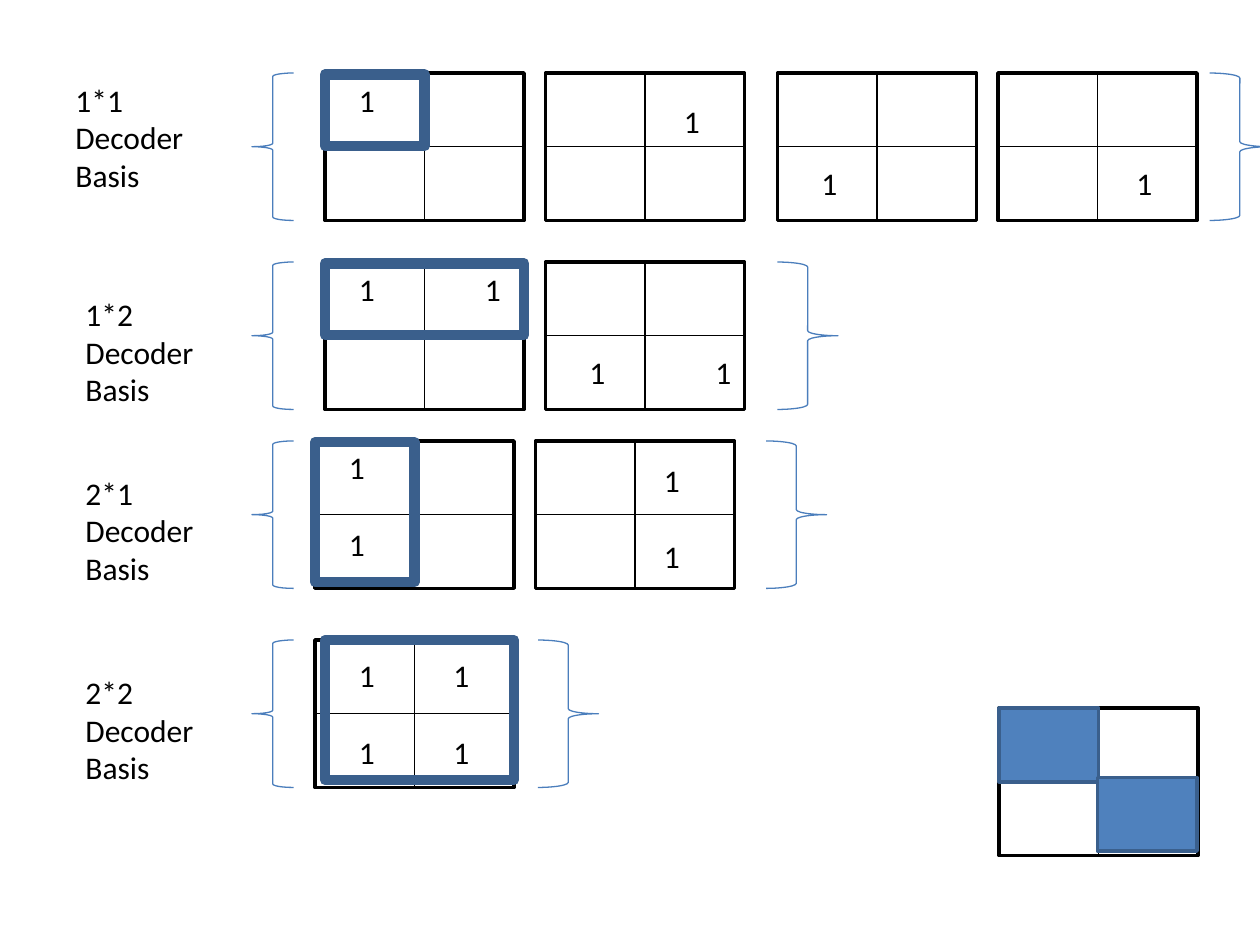
from lxml.etree import SubElement
from pptx import Presentation
from pptx.dml.color import RGBColor
from pptx.enum.shapes import MSO_CONNECTOR, MSO_SHAPE as SHAPE
from pptx.enum.text import MSO_AUTO_SIZE
from pptx.oxml.ns import qn
from pptx.util import Inches, Pt

BLACK, WHITE, BLUE = "000000", "FFFFFF", "4F81BD"
FRAME_BLUE, BRACE_BLUE = "3A5F8C", "4B7EBC"
GRID_WIDTH, GRID_HEIGHT = 1.58, 1.17
CELL_WIDTH, CELL_HEIGHT = GRID_WIDTH / 2, GRID_HEIGHT / 2
LINE_GAP = 22  # one text line, in points
BRACE_LEFT = 2

# Offsets are measured from the row's top; digits are
# (left, offset, width, lines, space between lines, tab stop)
ROWS = [
    {"top": 0.58, "label": (0.5, 0.01, ["1*1 Decoder", "Basis"]),
     "grids": [2.58, 4.33, 6.17, 7.92], "right_brace": 9.6,
     "digits": [(2.75, 0.01, 0.42, ["1"], 0, None),
                (5.33, 0.18, 0.42, ["1"], 0, None),
                (6.42, 0.67, 0.42, ["1"], 0, None),
                (8.92, 0.67, 0.42, ["1"], 0, None)],
     "frame": (2.58, 0.01, CELL_WIDTH, 0.57)},
    {"top": 2.08, "label": (0.58, 0.21, ["1*2", "Decoder", "Basis"]),
     "grids": [2.58, 4.33], "right_brace": 6.17,
     "digits": [(2.75, 0.01, 1.42, ["1\t1"], 0, 1),
                (4.58, 0.67, 1.33, ["1\t1"], 0, 1)],
     "frame": (2.58, 0.01, GRID_WIDTH, 0.57)},
    {"top": 3.5, "label": (0.58, 0.21, ["2*1 Decoder", "Basis"]),
     "grids": [2.5, 4.25], "right_brace": 6.08,
     "digits": [(2.67, 0.01, 1.42, ["1", "1"], LINE_GAP, None),
                (5.17, 0.11, 1.33, ["1", "1"], LINE_GAP, None)],
     "frame": (2.5, 0.01, CELL_WIDTH, 1.11)},
    {"top": 5.08, "label": (0.58, 0.21, ["2*2 Decoder", "Basis"]),
     "grids": [2.5], "right_brace": 4.27,
     "digits": [(2.75, 0.08, 1.33, ["1\t1", "1\t1"], LINE_GAP, 0.75)],
     "frame": (2.58, 0, 1.5, 1.11)},
]
CHECKER_GRID = (7.93, 5.62)
CHECKER_CELLS = [(7.93, 5.62), (8.71, 6.17)]

presentation = Presentation()
presentation.slide_width, presentation.slide_height = Inches(10), Inches(7.5)
slide = presentation.slides.add_slide(presentation.slide_layouts[6])


def color(value):
    return RGBColor.from_string(value)


def add_shape(kind, left, top, width, height, line, points, fill=None):
    shape = slide.shapes.add_shape(kind, *map(Inches, (left, top, width, height)))
    shape.shadow.inherit = False
    if fill:
        shape.fill.solid()
        shape.fill.fore_color.rgb = color(fill)
    else:
        shape.fill.background()
    shape.line.color.rgb = color(line)
    shape.line.width = Pt(points)
    return shape


def add_grid(left, top):
    """A square of two by two cells with its middle lines."""
    box = add_shape(SHAPE.RECTANGLE, left, top, GRID_WIDTH, GRID_HEIGHT, BLACK, 2, WHITE)
    for begin, end in ((0, 2), (1, 3)):
        divider = slide.shapes.add_connector(MSO_CONNECTOR.STRAIGHT, 0, 0, 0, 0)
        divider.begin_connect(box, begin)
        divider.end_connect(box, end)
        divider.line.color.rgb = color(BLACK)
        divider.line.width = Pt(0.75)
        SubElement(divider._element.spPr, qn("a:effectLst"))


def add_text(left, top, width, lines, gap=0, tab=None):
    height = 0.1 + len(lines) * 0.3 + (len(lines) - 1) * gap / 72
    box = slide.shapes.add_textbox(*map(Inches, (left, top, width, height)))
    frame = box.text_frame
    frame.word_wrap = True
    frame.auto_size = MSO_AUTO_SIZE.SHAPE_TO_FIT_TEXT
    frame.text = "\n".join(lines)
    for index, paragraph in enumerate(frame.paragraphs):
        paragraph.font.size = Pt(18)
        paragraph.font.name = "Calibri"
        paragraph.font.color.rgb = color(BLACK)
        paragraph.space_before = Pt(gap if index else 0)
        if tab:
            stops = paragraph._p.get_or_add_pPr().makeelement(qn("a:tabLst"))
            SubElement(stops, qn("a:tab"), pos=str(Inches(tab)), algn="l")
            paragraph._p.pPr.find(qn("a:defRPr")).addprevious(stops)


# Decoder rows: label, grids, digits, highlighted frame and braces
for row in ROWS:
    top = row["top"]
    label_left, label_offset, label_lines = row["label"]
    add_text(label_left, top + label_offset, 1.42, label_lines)
    for grid_left in row["grids"]:
        add_grid(grid_left, top)
    for left, offset, width, lines, gap, tab in row["digits"]:
        add_text(left, top + offset, width, lines, gap, tab)
    left, offset, width, height = row["frame"]
    add_shape(SHAPE.RECTANGLE, left, top + offset, width, height, FRAME_BLUE, 6)
    for kind, left, width in ((SHAPE.LEFT_BRACE, BRACE_LEFT, 0.33),
                              (SHAPE.RIGHT_BRACE, row["right_brace"], 0.48)):
        add_shape(kind, left, top, width, GRID_HEIGHT, BRACE_BLUE, 0.75)

# Checkered grid in the corner
add_grid(*CHECKER_GRID)
for left, top in CHECKER_CELLS:
    add_shape(SHAPE.RECTANGLE, left, top, CELL_WIDTH, CELL_HEIGHT, FRAME_BLUE, 2, BLUE)

presentation.save("out.pptx")
